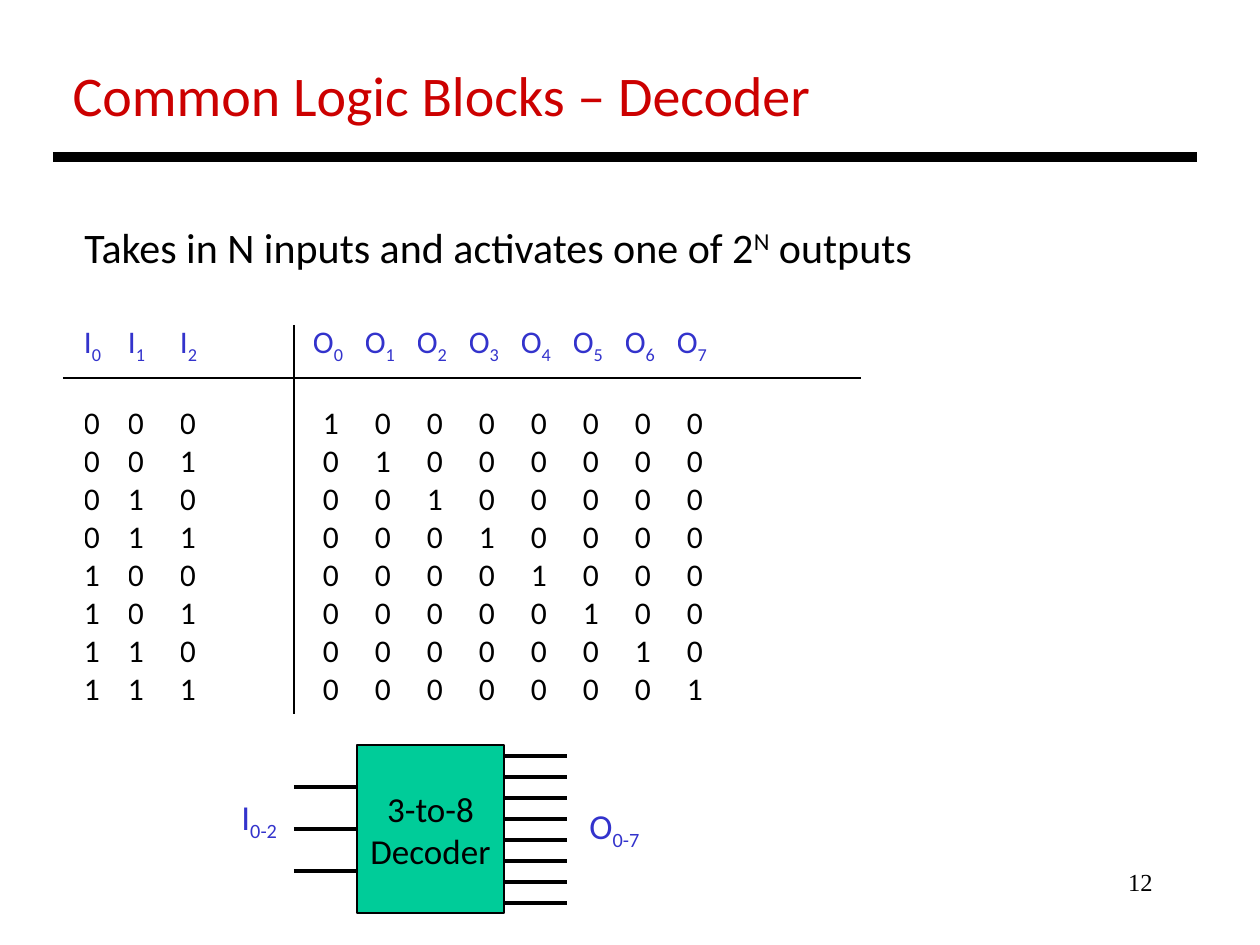
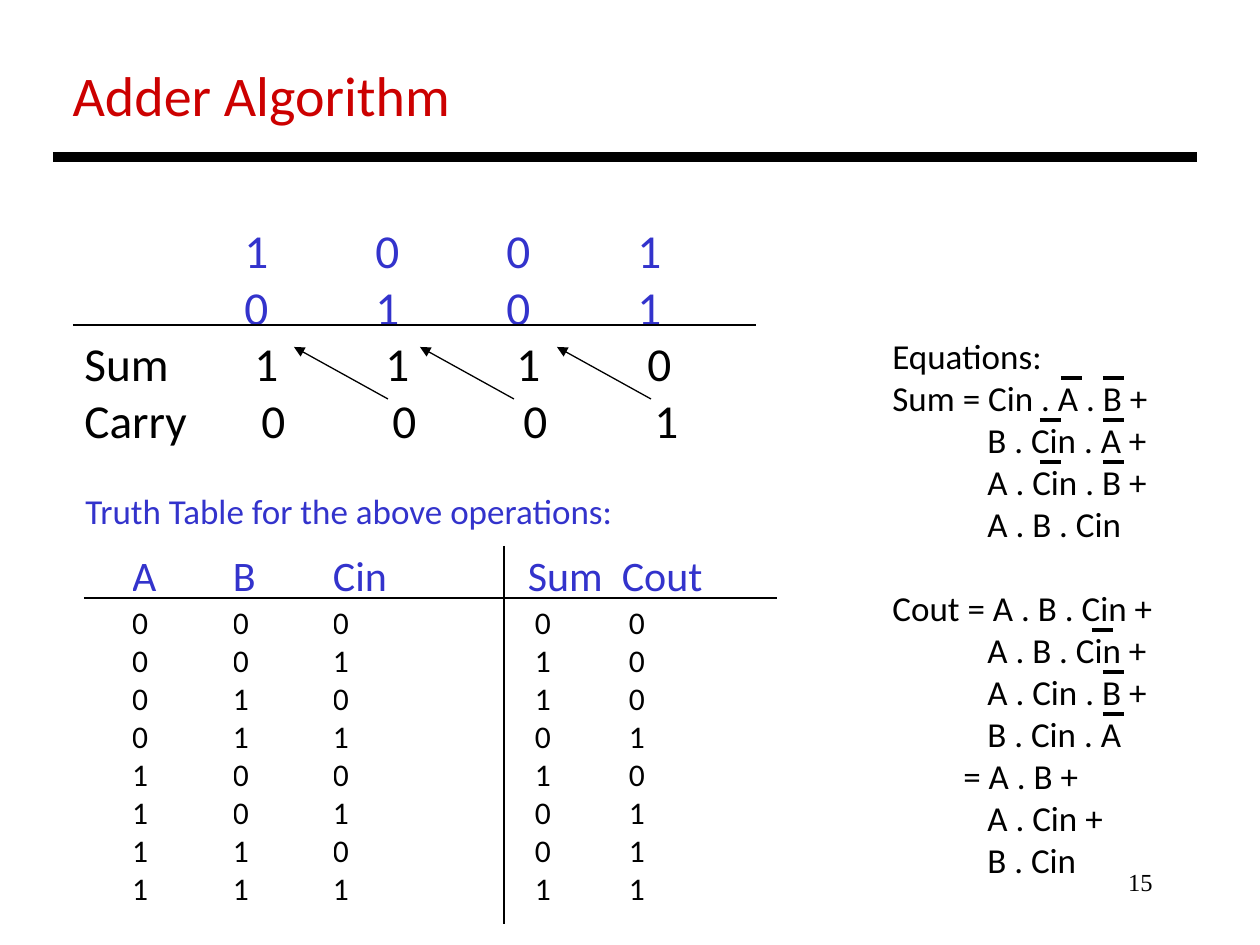
from dataclasses import dataclass

from lxml import etree
from pptx import Presentation
from pptx.dml.color import RGBColor
from pptx.enum.shapes import MSO_CONNECTOR, MSO_SHAPE
from pptx.enum.text import MSO_ANCHOR, MSO_AUTO_SIZE, PP_ALIGN
from pptx.oxml.ns import qn
from pptx.util import Inches, Pt

SCALE = 7257  # EMU in one px, at 126 px to the inch
STRAIGHT, RECTANGLE = MSO_CONNECTOR.STRAIGHT, MSO_SHAPE.RECTANGLE
MIDDLE, NO_FIT = MSO_ANCHOR.MIDDLE, MSO_AUTO_SIZE.NONE
LEFT, CENTER, RIGHT = PP_ALIGN.LEFT, PP_ALIGN.CENTER, PP_ALIGN.RIGHT
SUBSCRIPT, SUPERSCRIPT = "-25000", "30000"


@dataclass(frozen=True)
class Theme:
    red: RGBColor = RGBColor(0xCC, 0x00, 0x00)
    blue: RGBColor = RGBColor(0x33, 0x33, 0xCC)
    green: RGBColor = RGBColor(0x00, 0xCC, 0x99)
    black: RGBColor = RGBColor(0x00, 0x00, 0x00)
    font: str = "Calibri"
    number_font: str = "Times New Roman"
    title: int = 32
    sum: int = 27
    lead: int = 24
    label: int = 20
    cell: int = 18
    number: int = 14
    thin: float = 0.75
    wire: float = 2.25
    band: float = 6


theme = Theme()


def write(para, text, size, color, shift=SUBSCRIPT, font=theme.font):
    """Fill a paragraph; every second piece between bars is raised or lowered."""
    for index, piece in enumerate(text.split("|")):
        if not piece:
            continue
        span = para.add_run()
        span.text = piece
        span.font.name, span.font.size = font, Pt(size)
        span.font.color.rgb = color
        if index % 2:
            span._r.get_or_add_rPr().set("baseline", shift)


def add_text(page, place, lines, size, color, **style):
    box = page.shapes.add_textbox(*[n * SCALE for n in place])
    box.text_frame.word_wrap = True
    for index, line in enumerate(lines):
        paras = box.text_frame
        para = paras.add_paragraph() if index else paras.paragraphs[0]
        write(para, line, size, color, **style)
    return box.text_frame.paragraphs


deck = Presentation()
deck.slide_width, deck.slide_height = Inches(10), Inches(7.5)

# Titles and page numbers
pages = []
for heading, number in (("Common Logic Blocks – Decoder", "12"),
                        ("Adder Algorithm", "15")):
    page = deck.slides.add_slide(deck.slide_layouts[5])
    title = page.shapes.title
    title.left, title.top, title.width, title.height = (
        n * SCALE for n in (60, 54, 1100, 81))
    title.text_frame.auto_size = NO_FIT
    title.text_frame.vertical_anchor = MIDDLE
    title.text_frame.paragraphs[0].alignment = LEFT
    write(title.text_frame.paragraphs[0], heading, theme.title, theme.red)
    footer = add_text(page, (903, 861, 262, 63), [number], theme.number,
                      theme.black, font=theme.number_font)
    footer[0].alignment = RIGHT
    pages.append(page)
decoder_page, adder_page = pages

# Truth table values
decoder_rows = [[f"I|{i}" for i in range(3)] + [f"O|{i}" for i in range(8)]]
adder_rows = [["A", "B", "Cin", "Sum", "Cout"]]
for value in range(8):
    bits = [value >> 2 & 1, value >> 1 & 1, value & 1]
    decoder_rows.append(bits + [int(value == out) for out in range(8)])
    adder_rows.append(bits + [sum(bits) % 2, sum(bits) // 2])

# Truth tables: column edges, top, header height and size, indent of outputs
for page, rows, edges, top, header_height, header_size, indent in (
        (decoder_page, decoder_rows,
         [84, 128, 180] + [313 + 52 * i for i in range(9)],
         324, 81, theme.cell, 10),
        (adder_page, adder_rows, [132, 233, 333, 528, 622, 722],
         552, 53, theme.lead, 7)):
    width, height = edges[-1] - edges[0], header_height + 8 * 38
    table = page.shapes.add_table(
        len(rows), len(rows[0]), edges[0] * SCALE, top * SCALE,
        width * SCALE, height * SCALE).table
    table.first_row = table.horz_banding = False
    for column, start, end in zip(table.columns, edges, edges[1:]):
        column.width = (end - start) * SCALE
    for r, values in enumerate(rows):
        table.rows[r].height = (38 if r else header_height) * SCALE
        for c, value in enumerate(values):
            cell = table.cell(r, c)
            cell.fill.background()
            cell.margin_top = cell.margin_bottom = cell.margin_right = 0
            cell.margin_left = indent * SCALE if r and c > 2 else 0
            write(cell.text_frame.paragraphs[0], str(value),
                  theme.cell if r else header_size,
                  theme.black if r else theme.blue)

# Decoder: statement, block and port labels
add_text(decoder_page, (72, 215, 900, 63),
         ["Takes in N inputs and activates one of 2|N| outputs"],
         theme.lead, theme.black, shift=SUPERSCRIPT)
block = decoder_page.shapes.add_shape(
    RECTANGLE, *[n * SCALE for n in (357, 745, 147, 168)])
block.shadow.inherit = False
block.fill.solid()
block.fill.fore_color.rgb = theme.green
block.line.color.rgb, block.line.width = theme.black, Pt(theme.thin)
block.text_frame.word_wrap = False
block.text_frame.vertical_anchor = MIDDLE
block.text_frame.text = "3-to-8\nDecoder"
for para in block.text_frame.paragraphs:
    para.alignment = CENTER
    para.font.name, para.font.size = theme.font, Pt(theme.label)
    para.font.color.rgb = theme.black
for port, left, top in (("I|0-2", 229, 789), ("O|0-7", 577, 798)):
    add_text(decoder_page, (left, top, 85, 55), [port],
             theme.label, theme.blue)

# Adder: worked sum, digits on tab stops
sum_paras = add_text(
    adder_page, (72, 215, 690, 242),
    ["\t1\t0\t0\t1", "\t0\t1\t0\t1", "Sum\t1\t1\t1\t0", "Carry\t0\t0\t0\t1"],
    theme.sum, theme.black)
for para, first_stop in zip(sum_paras, (160, 160, 170, 177)):
    stops = etree.SubElement(para._p.get_or_add_pPr(), qn("a:tabLst"))
    for digit in range(4):
        position = (first_stop + 131 * digit) * SCALE
        etree.SubElement(stops, qn("a:tab"), pos=str(position), algn="l")
for para in sum_paras[:2]:
    para.runs[0].font.color.rgb = theme.blue

# Adder: table caption and equations
add_text(adder_page, (73, 483, 600, 55),
         ["Truth Table for the above operations:"], theme.label, theme.blue)
equations = ["Equations:", "Sum = Cin . A . B +", "B . Cin . A +",
             "A . Cin . B +", "A . B . Cin", "Cout = A . B . Cin +",
             "A . B . Cin +", "A . Cin . B +", "B . Cin . A", "= A . B +",
             "A . Cin +", "B . Cin"]
for para in add_text(adder_page, (880, 328, 310, 564), equations,
                     theme.label, theme.black):
    if para.text.startswith("Cout"):
        para.space_before = Pt(24)
    elif para.text.startswith("="):
        para._p.get_or_add_pPr().set("marL", str(71 * SCALE))
    elif not para.text.startswith(("Equations", "Sum")):
        para._p.get_or_add_pPr().set("marL", str(95 * SCALE))

# Lines: start, end, weight
title_band = (53, 157, 1197, 157, theme.band)
decoder_lines = [title_band, (63, 378, 861, 378, theme.thin),
                 (294, 325, 294, 714, theme.thin)]
decoder_lines += [(294, y, 357, y, theme.wire) for y in range(787, 872, 42)]
decoder_lines += [(504, y, 567, y, theme.wire) for y in range(756, 904, 21)]
adder_lines = [title_band, (73, 325, 756, 325, theme.thin),
               (84, 598, 777, 598, theme.thin),
               (504, 546, 504, 924, theme.thin)]
negations = ((0, 1061), (0, 1103), (1, 1040), (1, 1103), (2, 1040),
             (2, 1103), (6, 1092), (7, 1103), (8, 1103))
adder_lines += [(x, 378 + 42 * row, x + 21, 378 + 42 * row, theme.wire)
                for row, x in negations]
carry_arrows = [(x, 399, x - 94, 347, theme.thin) for x in (651, 514, 388)]

for page, lines, arrow in ((decoder_page, decoder_lines, False),
                           (adder_page, adder_lines, False),
                           (adder_page, carry_arrows, True)):
    for *ends, weight in lines:
        line = page.shapes.add_connector(STRAIGHT, *[n * SCALE for n in ends])
        line.line.color.rgb, line.line.width = theme.black, Pt(weight)
        properties = line._element.spPr
        if arrow:
            etree.SubElement(properties.find(qn("a:ln")), qn("a:tailEnd"),
                             type="triangle")
        etree.SubElement(properties, qn("a:effectLst"))

deck.save("out.pptx")
